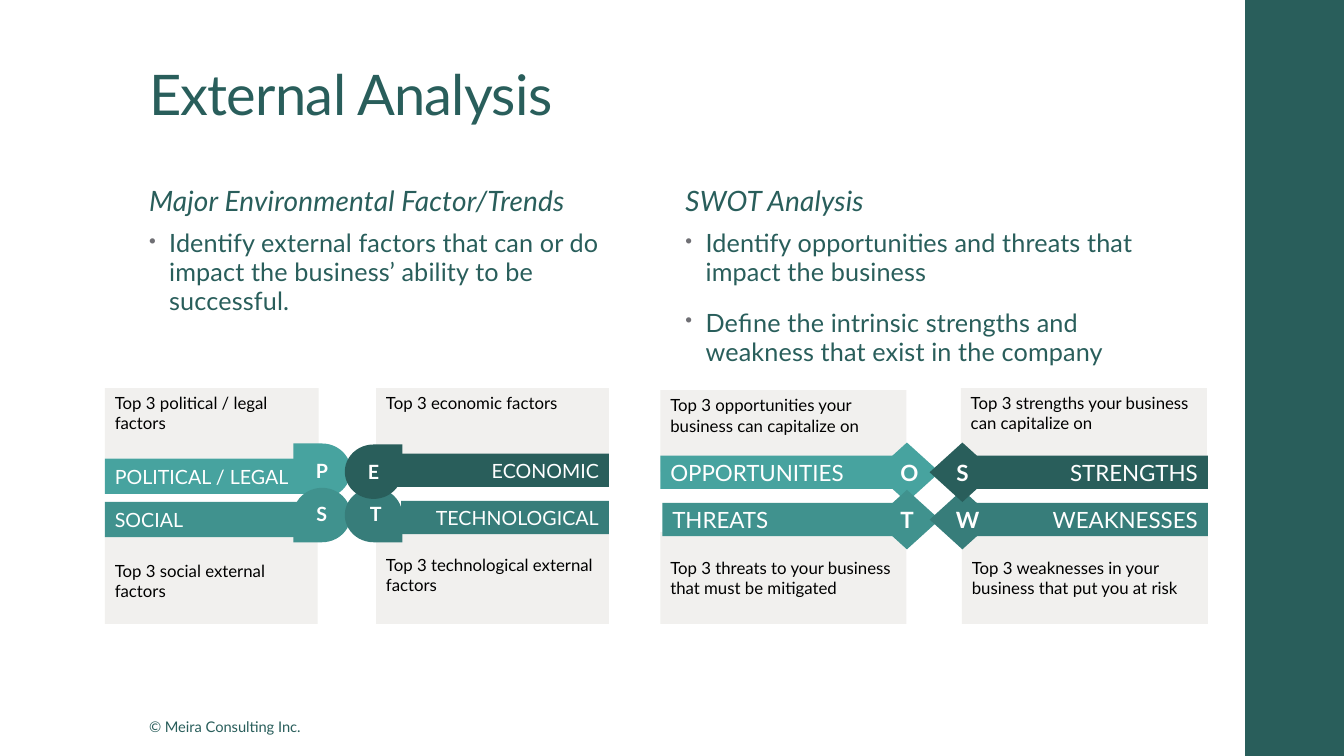
from collections import namedtuple

from lxml import etree
from pptx import Presentation
from pptx.dml.color import RGBColor
from pptx.enum.shapes import MSO_SHAPE
from pptx.enum.text import MSO_ANCHOR, PP_ALIGN
from pptx.oxml.ns import qn
from pptx.util import Inches, Pt

RECT, TEARDROP, DIAMOND = MSO_SHAPE.RECTANGLE, MSO_SHAPE.TEAR, MSO_SHAPE.DIAMOND
TOP, MIDDLE, BOTTOM = MSO_ANCHOR.TOP, MSO_ANCHOR.MIDDLE, MSO_ANCHOR.BOTTOM
LEFT, CENTER, RIGHT = PP_ALIGN.LEFT, PP_ALIGN.CENTER, PP_ALIGN.RIGHT


class Theme:
    font = "Lato"
    dark, deep, mid, light = "295E5B", "377D7A", "40928E", "47A39F"
    panel, bullet, black, white = "F1F0EE", "6F6F74", "000000", "FFFFFF"
    title, heading, body, swot, pest, note, footer = 40, 20, 18, 16, 14, 12, 10.5


# note, bar and badge are (left, top, width, height)
Quadrant = namedtuple(
    "Quadrant", "letter label text color align note bar badge flip letter_box inset",
    defaults=("", None, 0.05))

PEST = [
    Quadrant("P", "POLITICAL / LEGAL", "Top 3 political / legal factors", Theme.light, LEFT,
             (1.04, 3.85, 2.12, 0.7), (1.04, 4.55, 2.01, 0.35), (2.91, 4.4, 0.57, 0.54), "H"),
    Quadrant("S", "SOCIAL", "Top 3 social external factors", Theme.mid, LEFT,
             (1.04, 5.31, 2.11, 0.88), (1.04, 4.98, 2.01, 0.35), (2.91, 4.84, 0.57, 0.54),
             "HV", (3.04, 4.93, 0.34, 0.34), 0.25),
    Quadrant("T", "TECHNOLOGICAL", "Top 3 technological external factors", Theme.deep, RIGHT,
             (3.73, 5.25, 2.31, 0.94), (3.98, 4.97, 2.06, 0.33), (3.42, 4.84, 0.57, 0.54),
             "V", (3.57, 4.93, 0.34, 0.34), 0.25),
    Quadrant("E", "ECONOMIC", "Top 3 economic factors", Theme.dark, RIGHT,
             (3.73, 3.85, 2.31, 0.7), (3.94, 4.5, 2.1, 0.33), (3.42, 4.41, 0.57, 0.54)),
]

SWOT = [
    Quadrant("O", "OPPORTUNITIES", "Top 3 opportunities your business can capitalize on",
             Theme.light, LEFT, (6.55, 3.87, 2.44, 0.81), (6.55, 4.52, 2.44, 0.33),
             (8.67, 4.39, 0.65, 0.59)),
    Quadrant("T", "THREATS", "Top 3 threats to your business that must be mitigated",
             Theme.mid, LEFT, (6.55, 5.28, 2.44, 0.91), (6.57, 4.99, 2.44, 0.33),
             (8.67, 4.86, 0.65, 0.59), inset=0.25),
    Quadrant("W", "WEAKNESSES", "Top 3 weaknesses in your business that put you at risk",
             Theme.deep, RIGHT, (9.54, 5.28, 2.44, 0.91), (9.54, 4.99, 2.44, 0.33),
             (9.22, 4.86, 0.65, 0.59), inset=0.25),
    Quadrant("S", "STRENGTHS", "Top 3 strengths your business can capitalize on",
             Theme.dark, RIGHT, (9.53, 3.85, 2.44, 0.81), (9.54, 4.52, 2.44, 0.33),
             (9.22, 4.39, 0.65, 0.59)),
]

COLUMNS = [
    (1.38, "Major Environmental Factor/Trends",
     ["Identify external factors that can or do impact the business’ ability to be successful."]),
    (6.7, "SWOT Analysis",
     ["Identify opportunities and threats that impact the business",
      "Define the intrinsic strengths and weakness that exist in the company"]),
]


def add_bullet(paragraph):
    props = paragraph._p.get_or_add_pPr()
    props.set("marL", str(Inches(0.2)))
    props.set("indent", str(Inches(-0.2)))
    color = etree.SubElement(props, qn("a:buClr"))
    etree.SubElement(color, qn("a:srgbClr"), val=Theme.bullet)
    etree.SubElement(props, qn("a:buSzPct"), val="80000")
    etree.SubElement(props, qn("a:buChar"), char="•")


def write(shape, *lines, size, color=Theme.dark, bold=False, italic=False, align=LEFT,
          anchor=TOP, wrap=True, inset=0.05, bullets=False, line=None, before=0, after=0,
          tracking=0):
    frame = shape.text_frame
    frame.word_wrap = wrap
    frame.vertical_anchor = anchor
    frame.margin_top = Inches(inset)
    for index, text in enumerate(lines):
        paragraph = frame.add_paragraph() if index else frame.paragraphs[0]
        if bullets:
            add_bullet(paragraph)
        paragraph.alignment = align
        paragraph.line_spacing = line
        paragraph.space_before = Pt(before if index else 0)
        paragraph.space_after = Pt(after)
        run = paragraph.add_run()
        run.text = text
        font = run.font
        font.name, font.size, font.bold, font.italic = Theme.font, Pt(size), bold, italic
        font.color.rgb = RGBColor.from_string(color)
        if tracking:
            run._r.get_or_add_rPr().set("spc", str(round(tracking * 100)))


def add_block(shapes, kind, box, color, flip=""):
    block = shapes.add_shape(kind, *map(Inches, box))
    block.shadow.inherit = False
    block.fill.solid()
    block.fill.fore_color.rgb = RGBColor.from_string(color)
    block.line.fill.background()
    for axis in flip:
        block._element.spPr.xfrm.set("flip" + axis, "1")
    return block


def add_label(shapes, box, *lines, **style):
    write(shapes.add_textbox(*map(Inches, box)), *lines, **style)


def add_matrix(slide, quadrants, badge_kind, size):
    shapes = slide.shapes.add_group_shape().shapes
    for q in quadrants:
        write(add_block(shapes, RECT, q.note, Theme.panel), q.text,
              size=Theme.note, color=Theme.black, inset=q.inset)
    for q in quadrants:
        write(add_block(shapes, RECT, q.bar, q.color), q.label,
              size=size, color=Theme.white, align=q.align, anchor=MIDDLE)
    for q in quadrants:
        badge = add_block(shapes, badge_kind, q.badge, q.color, q.flip)
        letter = dict(size=size, color=Theme.white, bold=True)
        # A vertical flip would turn the letter over, so it gets its own box
        if q.letter_box:
            add_label(shapes, q.letter_box, q.letter, **letter)
        else:
            write(badge, q.letter, align=CENTER, anchor=MIDDLE, **letter)


def main():
    deck = Presentation()
    deck.slide_width, deck.slide_height = Inches(13.33), Inches(7.5)
    slide = deck.slides.add_slide(deck.slide_layouts[6])

    # Side band and footer
    add_block(slide.shapes, RECT, (12.35, 0, 0.98, 7.5), Theme.dark)
    add_label(slide.shapes, (1.38, 7.07, 1.72, 0.28), "© Meira Consulting Inc.",
              size=Theme.footer, wrap=False)

    # Title and the two text columns
    add_label(slide.shapes, (1.38, 0.41, 10.6, 0.91), "External Analysis",
              size=Theme.title, anchor=BOTTOM, line=0.9, tracking=-0.5)
    for left, heading, points in COLUMNS:
        add_label(slide.shapes, (left, 1.41, 4.9, 0.8), heading, size=Theme.heading,
                  italic=True, anchor=BOTTOM, line=0.95, after=2, tracking=0.1)
        add_label(slide.shapes, (left, 2.23, 4.9, 4.52), *points, size=Theme.body,
                  bullets=True, line=0.95, before=14, after=2, tracking=0.1)

    # PEST and SWOT diagrams
    add_matrix(slide, PEST, TEARDROP, Theme.pest)
    add_matrix(slide, SWOT, DIAMOND, Theme.swot)

    deck.save("out.pptx")


if __name__ == "__main__":
    main()
